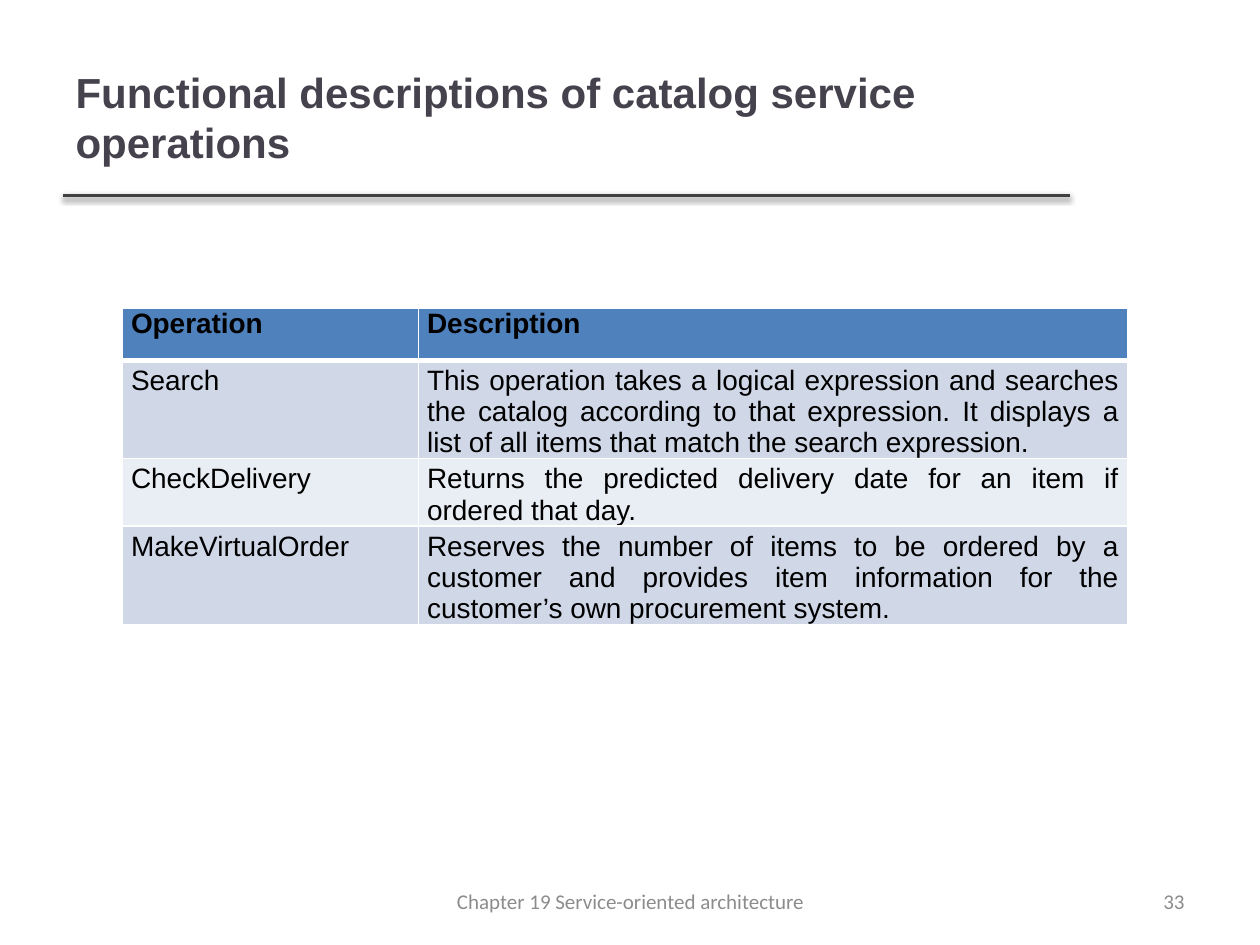
from lxml import etree
from pptx import Presentation
from pptx.dml.color import RGBColor
from pptx.enum.shapes import MSO_CONNECTOR
from pptx.enum.text import MSO_ANCHOR, MSO_AUTO_SIZE, PP_ALIGN
from pptx.oxml import parse_xml
from pptx.oxml.ns import nsdecls, qn
from pptx.util import Inches, Pt

TITLE = "Functional descriptions of catalog service operations"
ROWS = [
    ("Operation", "Description"),
    ("Search", "This operation takes a logical expression and searches the catalog "
     "according to that expression. It displays a list of all items that match "
     "the search expression."),
    ("CheckDelivery", "Returns the predicted delivery date for an item if ordered that day."),
    ("MakeVirtualOrder", "Reserves the number of items to be ordered by a customer and "
     "provides item information for the customer’s own procurement system."),
]
COL_WIDTHS = (2.35, 5.63)
ROW_HEIGHTS = (0.41, 0.78, 0.53, 0.78)
HEADER_FILL, BAND_FILLS = "4F81BD", ("D0D8E8", "E9EDF4")
FOOTERS = [  # text, left, width, alignment
    ("Chapter 19 Service-oriented architecture", 3.42, 3.17, PP_ALIGN.CENTER),
    ("33", 7.17, 2.33, PP_ALIGN.RIGHT),
]


def rgb(color):
    return RGBColor.from_string(color)


def write(tf, text, font="Arial", size=16, color="000000", bold=False,
          align=PP_ALIGN.LEFT, before=0, after=0):
    tf.word_wrap = True
    p = tf.paragraphs[0]
    p.alignment, p.space_before, p.space_after = align, Pt(before), Pt(after)
    r = p.add_run()
    r.text = text
    r.font.name, r.font.size, r.font.bold = font, Pt(size), bold
    r.font.color.rgb = rgb(color)


def set_borders(cell, bottom):
    """Draw white cell borders, 1 pt except for the bottom one."""
    widths = {"lnL": 1, "lnR": 1, "lnT": 1, "lnB": bottom}
    for i, (tag, width) in enumerate(widths.items()):
        ln = parse_xml(f'<a:{tag} {nsdecls("a")} w="{Pt(width)}"><a:solidFill>'
                       f'<a:srgbClr val="FFFFFF"/></a:solidFill></a:{tag}>')
        cell._tc.get_or_add_tcPr().insert(i, ln)


def add_rule(s):
    line = s.shapes.add_connector(MSO_CONNECTOR.STRAIGHT, Inches(0.5), Inches(1.55),
                                  Inches(8.49), Inches(1.55))
    line.line.color.rgb = rgb("404040")
    line.line.width = Pt(2)
    effects = etree.SubElement(line._element.spPr, qn("a:effectLst"))
    effects.append(parse_xml(
        f'<a:outerShdw {nsdecls("a")} blurRad="{Pt(3.1)}" dist="{Pt(1.6)}" dir="5400000" '
        'rotWithShape="0"><a:srgbClr val="000000"><a:alpha val="38000"/></a:srgbClr>'
        '</a:outerShdw>'))


def add_operations_table(s):
    table = s.shapes.add_table(len(ROWS), len(COL_WIDTHS), Inches(0.97), Inches(2.45),
                               Inches(sum(COL_WIDTHS)), Inches(sum(ROW_HEIGHTS))).table
    for column, width in zip(table.columns, COL_WIDTHS):
        column.width = Inches(width)
    for i, (row, height, texts) in enumerate(zip(table.rows, ROW_HEIGHTS, ROWS)):
        row.height = Inches(height)
        header, last = i == 0, i == len(ROWS) - 1
        for cell, text in zip(row.cells, texts):
            cell.margin_left = cell.margin_right = Inches(0.07)
            cell.margin_top, cell.margin_bottom = Inches(0 if header else 0.04), 0
            cell.fill.solid()
            cell.fill.fore_color.rgb = rgb(HEADER_FILL if header else BAND_FILLS[(i - 1) % 2])
            set_borders(cell, bottom=3 if header else 1)
            write(cell.text_frame, text, bold=header, align=PP_ALIGN.JUSTIFY,
                  after=3 if header or last else 0)


def main():
    prs = Presentation()
    prs.slide_width, prs.slide_height = Inches(10), Inches(7.5)
    s = prs.slides.add_slide(prs.slide_layouts[5])
    add_rule(s)

    title = s.shapes.title
    title.left, title.top = Inches(0.5), Inches(0.3)
    title.width, title.height = Inches(7.98), Inches(1.25)
    title.text_frame.auto_size = MSO_AUTO_SIZE.NONE
    title.text_frame.vertical_anchor = MSO_ANCHOR.MIDDLE
    write(title.text_frame, TITLE, size=24, color="46424D", bold=True)

    add_operations_table(s)

    for text, left, width, align in FOOTERS:
        tf = s.shapes.add_textbox(Inches(left), Inches(6.95), Inches(width),
                                  Inches(0.4)).text_frame
        tf.vertical_anchor = MSO_ANCHOR.MIDDLE
        write(tf, text, font="Calibri", size=12, color="8C8C8C", align=align)

    prs.save("out.pptx")


if __name__ == "__main__":
    main()
